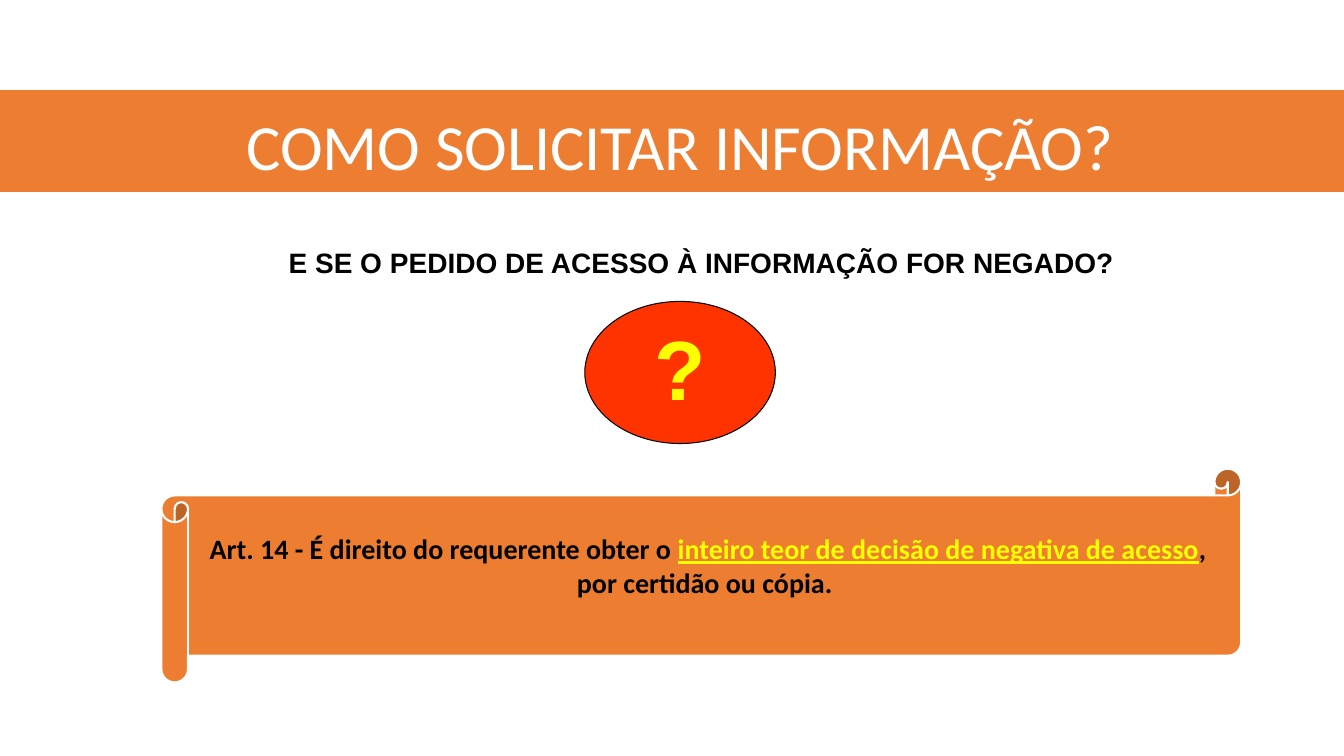
from dataclasses import dataclass

from pptx import Presentation
from pptx.dml.color import RGBColor
from pptx.enum.shapes import MSO_SHAPE
from pptx.enum.text import MSO_ANCHOR, MSO_AUTO_SIZE, PP_ALIGN
from pptx.util import Inches, Pt


@dataclass(frozen=True)
class Theme:
    orange: str = "ED7D31"
    red: str = "FF3300"
    yellow: str = "FFFF00"
    black: str = "000000"
    white: str = "FFFFFF"
    title_size: int = 46
    mark_size: int = 60
    text_size: int = 20
    title_font: str = "Calibri"
    heading_font: str = "Arial"


THEME = Theme()


def box(left, top, width, height):
    return [Inches(v) for v in (left, top, width, height)]


def add_run(p, text, font, size, color, bold=True, underline=False):
    r = p.add_run()
    r.text = text
    r.font.name = font
    r.font.size = Pt(size)
    r.font.color.rgb = RGBColor.from_string(color)
    r.font.bold = bold
    r.font.underline = underline


def centred_paragraph(sp, anchor=MSO_ANCHOR.MIDDLE):
    tf = sp.text_frame
    tf.word_wrap = True
    tf.auto_size = MSO_AUTO_SIZE.NONE
    tf.vertical_anchor = anchor
    p = tf.paragraphs[0]
    p.alignment = PP_ALIGN.CENTER
    return p


def add_figure(s, kind, place, fill, line, line_width):
    sp = s.shapes.add_shape(kind, *box(*place))
    sp.shadow.inherit = False
    sp.fill.solid()
    sp.fill.fore_color.rgb = RGBColor.from_string(fill)
    sp.line.color.rgb = RGBColor.from_string(line)
    sp.line.width = Pt(line_width)
    return sp


def add_title(s, text, place):
    sp = s.shapes.title
    sp.left, sp.top, sp.width, sp.height = box(*place)
    p = centred_paragraph(sp)
    add_run(p, text, THEME.title_font, THEME.title_size, THEME.white, bold=False)
    # Bring the title in front of its band
    s.shapes._spTree.append(sp._element)


def add_heading(s, text, place):
    sp = s.shapes.add_textbox(*box(*place))
    p = centred_paragraph(sp, MSO_ANCHOR.TOP)
    add_run(p, text, THEME.heading_font, THEME.text_size, THEME.black)


def add_question_mark(s, place):
    sp = add_figure(s, MSO_SHAPE.OVAL, place, THEME.red, THEME.black, 0.75)
    p = centred_paragraph(sp)
    p.line_spacing = 0.93
    add_run(p, "?", THEME.heading_font, THEME.mark_size, THEME.yellow)


def add_scroll(s, parts, place):
    sp = add_figure(s, MSO_SHAPE.HORIZONTAL_SCROLL, place, THEME.orange, THEME.white, 1.5)
    sp.adjustments[0] = 0.125
    p = centred_paragraph(sp, MSO_ANCHOR.TOP)
    sp.text_frame.margin_top = Inches(0.36)
    for text, highlighted in parts:
        color = THEME.yellow if highlighted else THEME.black
        add_run(p, text, THEME.title_font, THEME.text_size, color, underline=highlighted)


def main():
    prs = Presentation()
    prs.slide_width, prs.slide_height = Inches(13.33), Inches(7.5)
    s = prs.slides.add_slide(prs.slide_layouts[5])

    # Question and its symbol
    add_heading(s, "E SE O PEDIDO DE ACESSO À INFORMAÇÃO FOR NEGADO?", (1.31, 2.39, 11.29, 0.4))
    add_question_mark(s, (5.8, 2.99, 1.89, 1.41))

    # Article of the law
    add_scroll(s, [
        ("Art. 14 - É direito do requerente obter o ", False),
        ("inteiro teor de decisão de negativa de acesso", True),
        (", por certidão ou cópia. ", False),
    ], (1.6, 4.65, 10.71, 2.12))

    # Title band
    add_figure(s, MSO_SHAPE.RECTANGLE, (-0.24, 0.89, 13.88, 1.02), THEME.orange, THEME.white, 1)
    add_title(s, "COMO SOLICITAR INFORMAÇÃO?", (-0.15, 0.98, 13.79, 0.91))

    prs.save("out.pptx")


if __name__ == "__main__":
    main()
